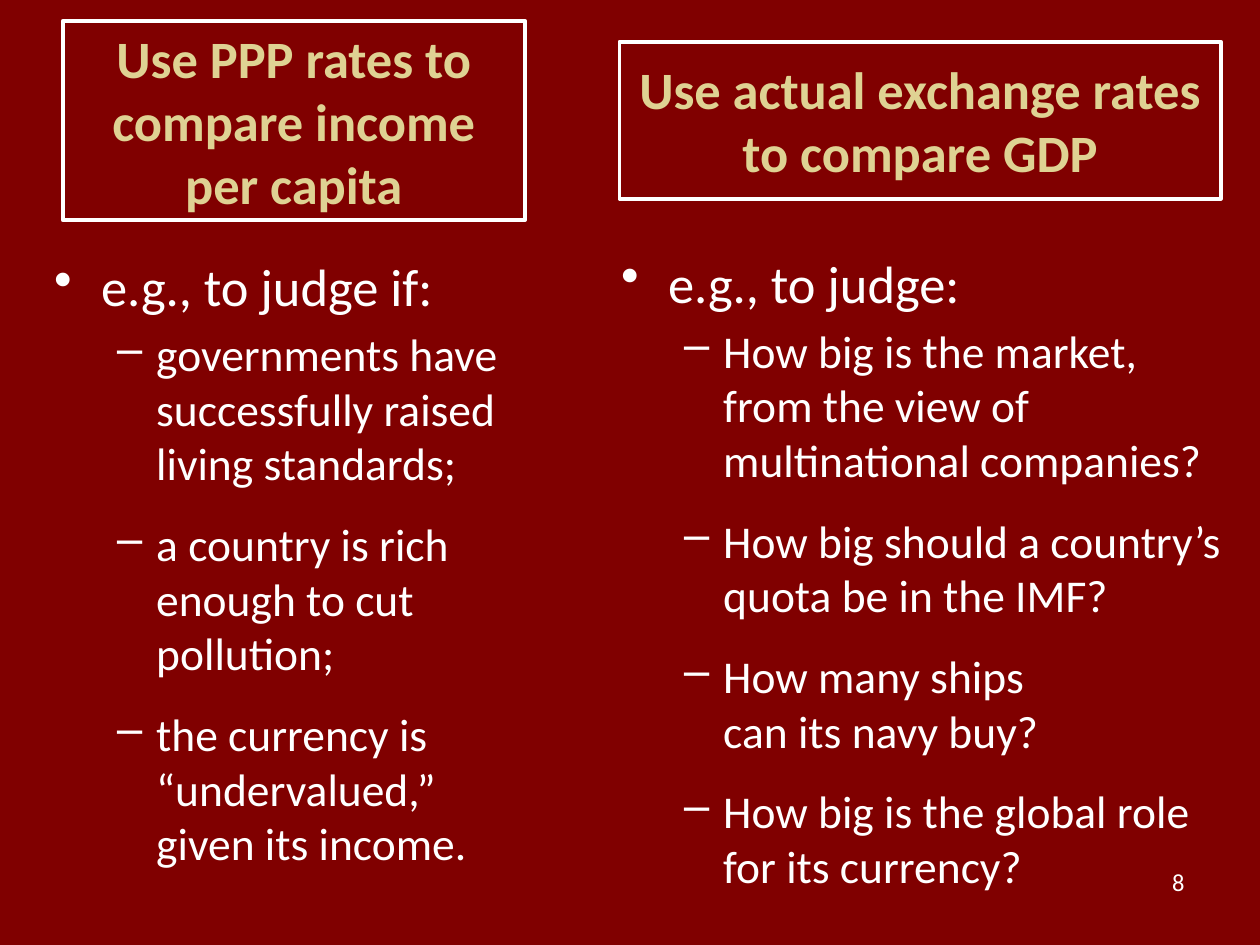
from dataclasses import dataclass

from lxml import etree
from pptx import Presentation
from pptx import util as u
from pptx.dml.color import RGBColor
from pptx.enum import shapes, text
from pptx.oxml import ns


@dataclass(frozen=True)
class Theme:
    back: RGBColor = RGBColor(0x80, 0x00, 0x00)
    gold: RGBColor = RGBColor(0xDF, 0xD2, 0x93)
    white: RGBColor = RGBColor(0xFF, 0xFF, 0xFF)
    face: str = "Calibri"
    head: float = 30
    item: float = 26
    page: float = 14
    line: float = 2.25


@dataclass(frozen=True)
class Box:
    left: float
    top: float
    width: float
    height: float

    def size(self) -> list:
        return [u.Cm(n) for n in (self.left, self.top, self.width, self.height)]


@dataclass(frozen=True)
class Level:
    mark: str
    indent: float
    hang: float


@dataclass(frozen=True)
class Column:
    frame: Box
    title: str
    body: Box
    lead: str
    items: tuple


THEME = Theme()
LEAD = Level("•", 0.95, 0.95)
ITEM = Level("–", 2.06, 0.79)
PAGE = Box(18.21, 17.35, 5.92, 1.32)

# Line breaks inside an item are marked with \v
COLUMNS = (
    Column(
        Box(1.27, 0.42, 9.31, 4.02),
        "Use PPP rates to compare income per capita",
        Box(0.84, 5, 10.13, 12.57),
        "e.g., to judge if:",
        (
            "governments have successfully raised living standards;",
            "a country is rich enough to cut pollution;",
            "the currency is “undervalued,”\vgiven its income.",
        ),
    ),
    Column(
        Box(12.49, 0.84, 12.12, 3.17),
        "Use actual exchange rates to compare GDP",
        Box(12.27, 4.93, 13.13, 13.33),
        "e.g., to judge:",
        (
            "How big is the market,\vfrom the view of multinational companies?",
            "How big should a country’s quota be in the IMF?",
            "How many ships\vcan its navy buy?",
            "How big is the global role\vfor its currency?",
        ),
    ),
)


def style(para, size: float, color: RGBColor, bold: bool = False) -> None:
    font = para.font
    font.name, font.size, font.bold = THEME.face, u.Pt(size), bold
    font.color.rgb = color


def bullet(para, level: Level) -> None:
    props = para._p.get_or_add_pPr()
    props.set("marL", str(u.Cm(level.indent)))
    props.set("indent", str(-u.Cm(level.hang)))
    mark = etree.Element(ns.qn("a:buChar"), char=level.mark)
    # The bullet must stand before the default run properties
    props.find(ns.qn("a:defRPr")).addprevious(mark)


def draw_title(slide, col: Column) -> None:
    shape = slide.shapes.add_shape(shapes.MSO_SHAPE.RECTANGLE, *col.frame.size())
    shape.shadow.inherit = False
    shape.fill.background()
    shape.line.color.rgb = THEME.white
    shape.line.width = u.Pt(THEME.line)
    frame = shape.text_frame
    frame.word_wrap = True
    frame.vertical_anchor = text.MSO_ANCHOR.MIDDLE
    para = frame.paragraphs[0]
    para.text = col.title
    para.alignment = text.PP_ALIGN.CENTER
    style(para, THEME.head, THEME.gold, True)


def draw_body(slide, col: Column) -> None:
    frame = slide.shapes.add_textbox(*col.body.size()).text_frame
    frame.word_wrap = True
    lead = frame.paragraphs[0]
    lead.text = col.lead
    style(lead, THEME.head, THEME.white)
    bullet(lead, LEAD)
    for i, line in enumerate(col.items):
        para = frame.add_paragraph()
        para.text = line
        para.level = 1
        para.space_before = u.Pt(15 if i else 5.2)
        style(para, THEME.item, THEME.white)
        bullet(para, ITEM)


def draw_page(slide, label: str) -> None:
    frame = slide.shapes.add_textbox(*PAGE.size()).text_frame
    frame.word_wrap = True
    para = frame.paragraphs[0]
    para.text = label
    para.alignment = text.PP_ALIGN.RIGHT
    style(para, THEME.page, THEME.white)


def main() -> None:
    deck = Presentation()
    deck.slide_width, deck.slide_height = u.Cm(25.4), u.Cm(19.05)
    slide = deck.slides.add_slide(deck.slide_layouts[6])

    # Background
    fill = slide.background.fill
    fill.solid()
    fill.fore_color.rgb = THEME.back

    # Two columns, each a framed title over a list
    for col in COLUMNS:
        draw_title(slide, col)
        draw_body(slide, col)

    # Page number
    draw_page(slide, "8")
    deck.save("out.pptx")


if __name__ == "__main__":
    main()
